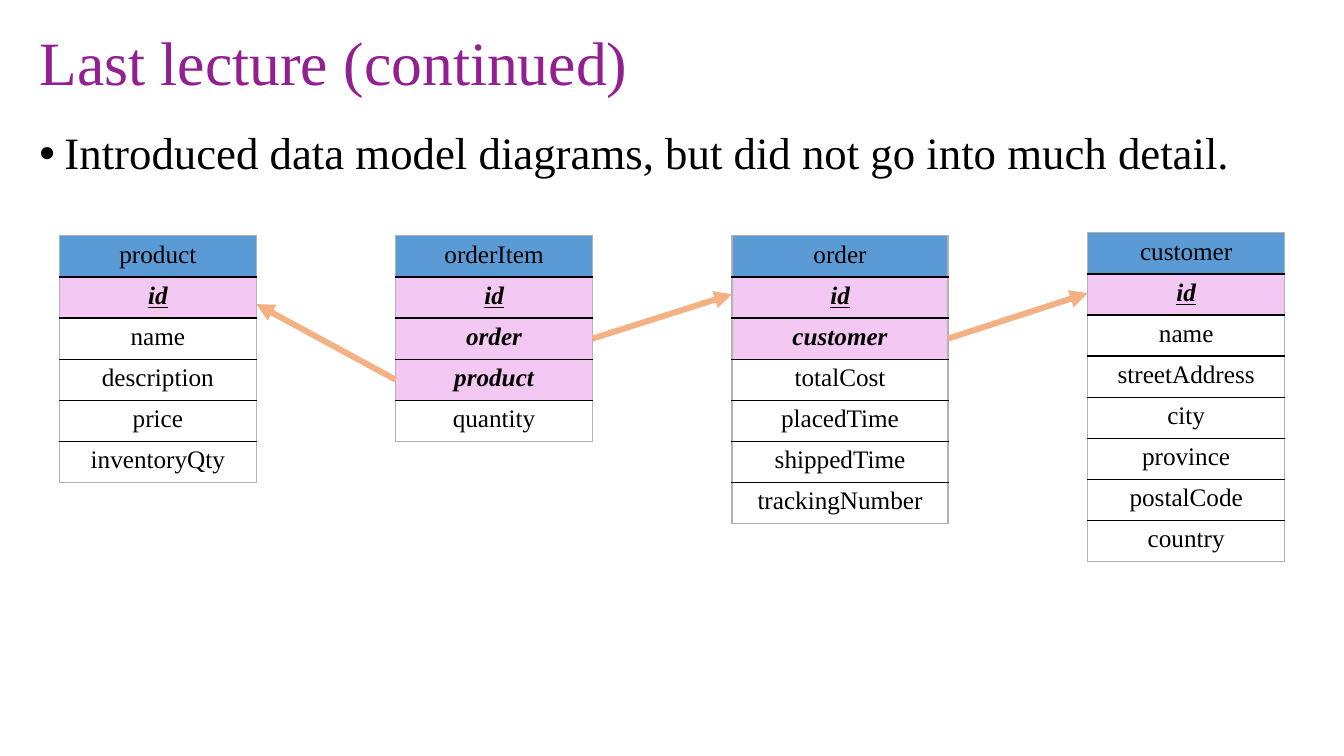
from lxml import etree
from pptx import Presentation
from pptx.dml.color import RGBColor
from pptx.enum import shapes, text
from pptx.oxml import ns
from pptx.util import Pt

HUES = {
    "title": "932092", "ink": "000000", "head": "5B9BD5", "key": "F3C9F3",
    "plain": "FFFFFF", "edge": "B2B2B2", "arrow": "F4B183",
}
FACE = "Times New Roman"
ROW = 29.35
MODEL = {
    "product": (42.5, 168.5, 140.6, 1,
                ["id", "name", "description", "price", "inventoryQty"]),
    "orderItem": (282.6, 168.5, 140.6, 3,
                  ["id", "order", "product", "quantity"]),
    "order": (522.9, 168.5, 154.3, 2,
              ["id", "customer", "totalCost", "placedTime", "shippedTime",
               "trackingNumber"]),
    "customer": (777, 166.3, 140.6, 1,
                 ["id", "name", "streetAddress", "city", "province",
                  "postalCode", "country"]),
}
LINKS = [
    ("orderItem", 3.5, "product", 1.66),
    ("orderItem", 2.5, "order", 1.42),
    ("order", 2.5, "customer", 1.47),
]


def hue(name):
    return RGBColor.from_string(HUES[name])


def add(node, tag, **attrs):
    return etree.SubElement(node, ns.qn(tag), attrs)


def style(para, size, color):
    font = para.font
    font.name, font.size = FACE, Pt(size)
    font.color.rgb = hue(color)


def put_title(slide, box, words):
    shape = slide.shapes.title
    shape.left, shape.top, shape.width, shape.height = map(Pt, box)
    frame = shape.text_frame
    frame.text = words
    frame.word_wrap = True
    frame.auto_size = text.MSO_AUTO_SIZE.NONE
    frame.vertical_anchor = text.MSO_ANCHOR.MIDDLE
    para = frame.paragraphs[0]
    para.alignment = text.PP_ALIGN.LEFT
    para.line_spacing = 0.9
    style(para, 44, "title")


def put_body(slide, box, words):
    frame = slide.shapes.add_textbox(*map(Pt, box)).text_frame
    frame.word_wrap = True
    para = frame.paragraphs[0]
    para.text = words
    para.line_spacing = 0.9
    para.space_before = Pt(10)
    style(para, 32, "ink")
    props = para._p.get_or_add_pPr()
    props.set("marL", str(Pt(18)))
    props.set("indent", str(-Pt(18)))
    bullet = etree.Element(ns.qn("a:buFont"), typeface="Arial")
    props.insert_element_before(bullet, "a:defRPr")
    bullet = etree.Element(ns.qn("a:buChar"), char="•")
    props.insert_element_before(bullet, "a:defRPr")


def rule(cell, side, color):
    line = add(cell._tc.get_or_add_tcPr(), side, w=str(Pt(1)))
    add(add(line, "a:solidFill"), "a:srgbClr", val=HUES[color])


def put_entity(slide, name):
    left, top, width, keys, fields = MODEL[name]
    names = [name] + fields
    last = len(names) - 1
    frame = slide.shapes.add_table(
        len(names), 1, Pt(left), Pt(top), Pt(width), Pt(ROW * len(names)))
    table = frame.table
    table.first_row = table.horz_banding = False
    for at, word in enumerate(names):
        table.rows[at].height = Pt(ROW)
        cell = table.cell(at, 0)
        rule(cell, "a:lnL", "edge")
        rule(cell, "a:lnR", "edge")
        rule(cell, "a:lnT", "ink" if at else "edge")
        rule(cell, "a:lnB", "ink" if at < last else "edge")
        is_key = 1 <= at <= keys
        cell.fill.solid()
        cell.fill.fore_color.rgb = hue(
            "key" if is_key else "plain" if at else "head")
        para = cell.text_frame.paragraphs[0]
        para.text = word
        para.alignment = text.PP_ALIGN.CENTER
        style(para, 18, "ink")
        para.font.bold = para.font.italic = is_key
        para.font.underline = at == 1


def put_link(slide, source, start, target, end):
    x1, y1, w1 = MODEL[source][:3]
    x2, y2, w2 = MODEL[target][:3]
    if x1 < x2:
        x1 += w1
    else:
        x2 += w2
    ends = x1, y1 + start * ROW, x2, y2 + end * ROW
    arrow = slide.shapes.add_connector(
        shapes.MSO_CONNECTOR.STRAIGHT, *map(Pt, ends))
    arrow.line.color.rgb = hue("arrow")
    arrow.line.width = Pt(4.25)
    add(arrow.line._get_or_add_ln(), "a:tailEnd", type="triangle")
    add(arrow._element.spPr, "a:effectLst")


def main():
    deck = Presentation()
    deck.slide_width, deck.slide_height = Pt(960), Pt(540)
    slide = deck.slides.add_slide(deck.slide_layouts[5])
    put_title(slide, (21, 12, 917, 70), "Last lecture (continued)")
    put_body(slide, (21, 90, 917, 441),
             "Introduced data model diagrams, but did not go into much detail.")
    for name in MODEL:
        put_entity(slide, name)
    for link in LINKS:
        put_link(slide, *link)
    deck.save("out.pptx")


if __name__ == "__main__":
    main()
